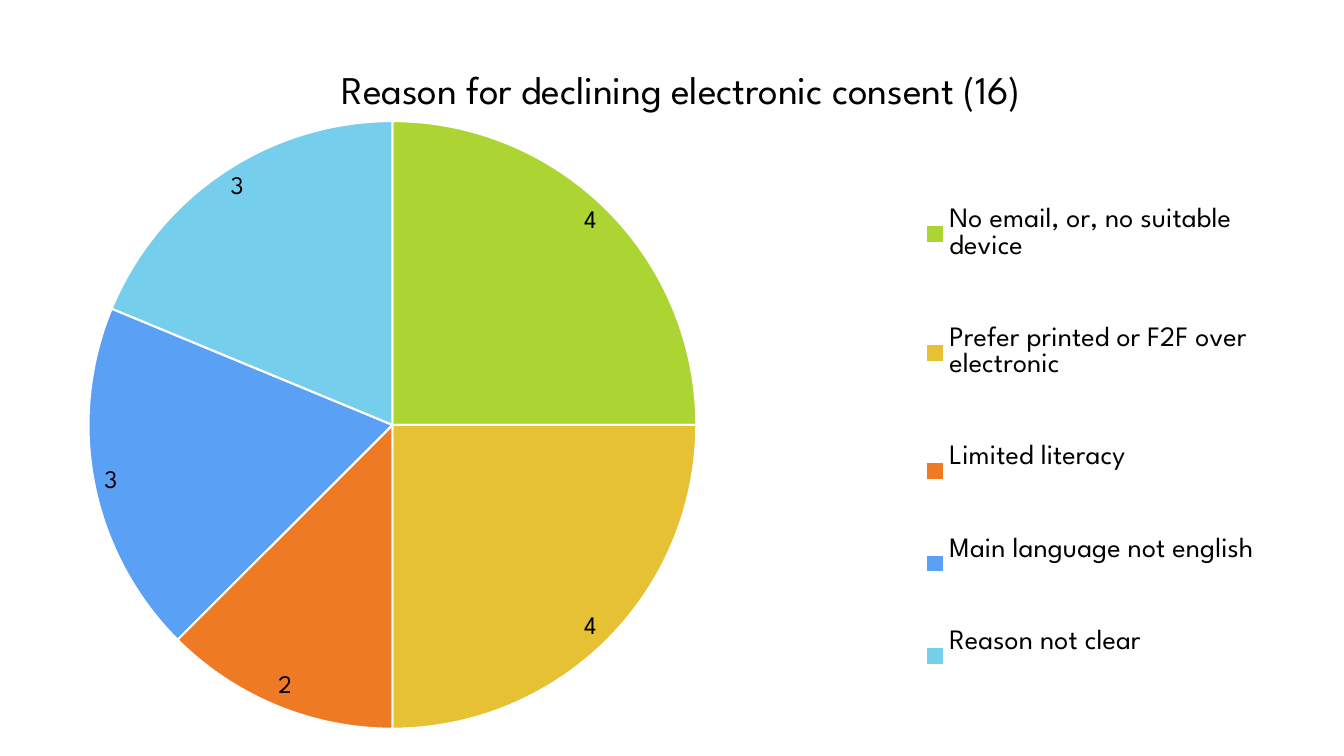
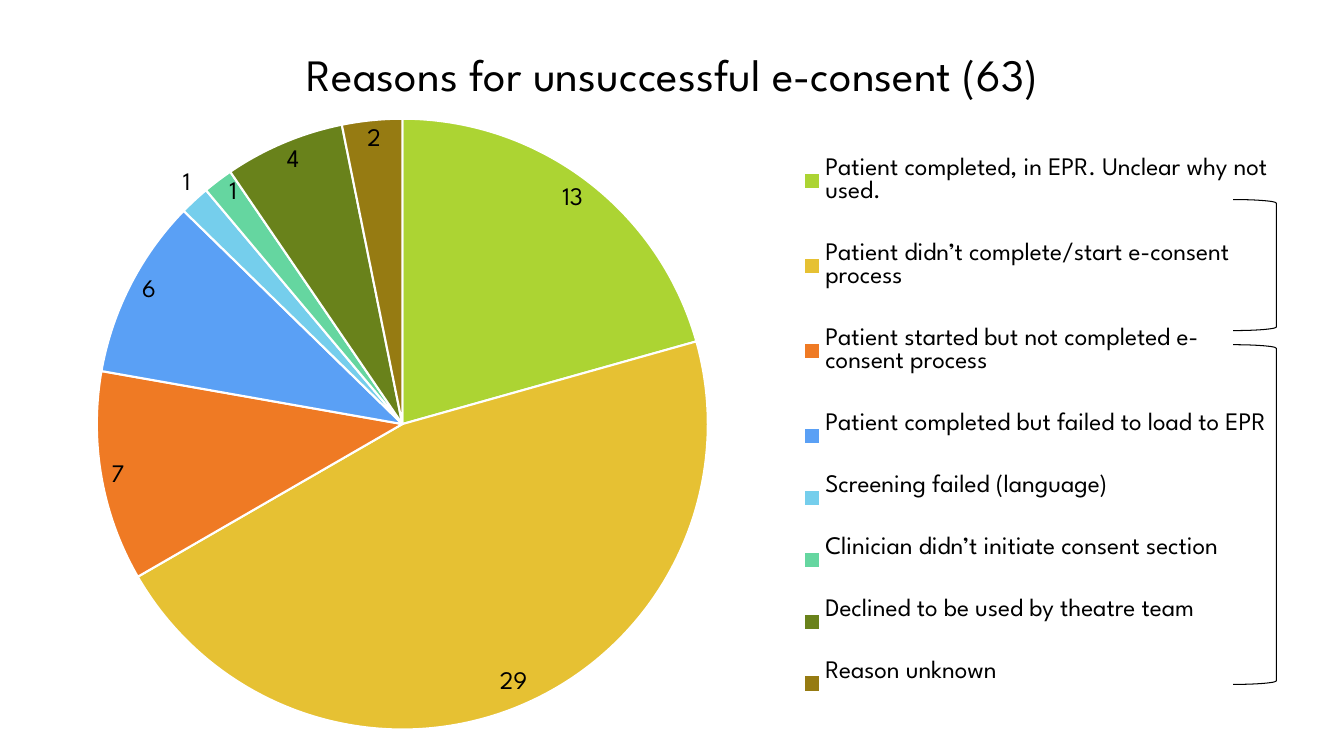
import lxml.etree
import pptx
import pptx.chart.data
import pptx.dml.color
import pptx.enum.chart
import pptx.enum.shapes
import pptx.oxml.ns
import pptx.util

Inches, Pt = pptx.util.Inches, pptx.util.Pt

# Shared look
FONT = "League Spartan"
COLOURS = {
    "text": "000000", "gap": "FFFFFF",
    "lime": "ACD433", "gold": "E6C133", "orange": "EF7A24", "blue": "5AA0F5",
    "sky": "75CEEC", "mint": "65D6A0", "olive": "69821B", "bronze": "967B12",
}
SLICES = ["lime", "gold", "orange", "blue", "sky", "mint", "olive", "bronze"]
LABEL_SIZE = 18

# Content: areas are in inches, layouts are fractions of the chart (x, y, w, h)
SLIDES = [
    {
        "title": "Reason for declining electronic consent (16)",
        "reasons": [
            ("No email, or, no suitable device", 4),
            ("Prefer printed or F2F over electronic", 4),
            ("Limited literacy", 2),
            ("Main language not english", 3),
            ("Reason not clear", 3),
        ],
        "area": (0.4, 0.37, 12.7, 6.93),
        "title_size": 28, "legend_size": 20,
        "title_at": (0.23, 0.04),
        "pie_at": (0.03, 0.12, 0.49, 0.87),
        "legend_at": (0.68, 0.15, 0.28, 0.83),
        "brackets": [],
    },
    {
        "title": "Reasons for unsuccessful e-consent (63)",
        "reasons": [
            ("Patient completed, in EPR. Unclear why not used.", 13),
            ("Patient didn’t complete/start e-consent process", 29),
            ("Patient started but not completed e-consent process", 7),
            ("Patient completed but failed to load to EPR", 6),
            ("Screening failed (language)", 1),
            ("Clinician didn’t initiate consent section", 1),
            ("Declined to be used by theatre team", 4),
            ("Reason unknown", 2),
        ],
        "area": (0.27, 0.18, 12.83, 7.13),
        "title_size": 32, "legend_size": 18,
        "title_at": (0.21, 0.04),
        "pie_at": (0.05, 0.14, 0.48, 0.85),
        "legend_at": (0.6, 0.14, 0.36, 0.84),
        "brackets": [(12.23, 1.98, 0.43, 1.3), (12.23, 3.42, 0.43, 3.37)],
    },
]


def rgb(name):
    return pptx.dml.color.RGBColor.from_string(COLOURS[name])


def set_font(font, size):
    for key, value in {"name": FONT, "size": Pt(size), "bold": False}.items():
        setattr(font, key, value)
    font.color.rgb = rgb("text")


def set_line(line, colour, width):
    line.color.rgb = rgb(colour)
    line.width = Pt(width)


def place(part, index, fractions, inner=False):
    """Give a chart part a manual layout, as its child number index."""
    qn = pptx.oxml.ns.qn
    for old in part.findall(qn("c:layout")):
        part.remove(old)
    layout = lxml.etree.Element(qn("c:layout"))
    manual = lxml.etree.SubElement(layout, qn("c:manualLayout"))
    settings = [("layoutTarget", "inner")] if inner else []
    settings += [("xMode", "edge"), ("yMode", "edge")]
    settings += zip("xywh", fractions)
    for tag, value in settings:
        lxml.etree.SubElement(manual, qn(f"c:{tag}")).set("val", str(value))
    part.insert(index, layout)


def add_pie(slide, content):
    names, counts = zip(*content["reasons"])
    data = pptx.chart.data.CategoryChartData()
    data.categories = names
    data.add_series("Series 1", counts)
    chart = slide.shapes.add_chart(
        pptx.enum.chart.XL_CHART_TYPE.PIE, *map(Inches, content["area"]), data).chart
    set_font(chart.font, 10)

    # Title
    chart.has_title = True
    title = chart.chart_title
    title.include_in_layout = False
    heading = title.text_frame.paragraphs[0].add_run()
    heading.text = content["title"]
    set_font(heading.font, content["title_size"])
    place(title._element, 1, content["title_at"])

    # Legend
    chart.has_legend = True
    legend = chart.legend
    legend.position = pptx.enum.chart.XL_LEGEND_POSITION.BOTTOM
    legend.include_in_layout = False
    set_font(legend.font, content["legend_size"])
    place(legend._element, 1, content["legend_at"])

    # Slices and their values
    pie = chart.plots[0]
    pie.vary_by_categories = True
    place(pie._element.getparent(), 0, content["pie_at"], inner=True)
    series = pie.series[0]
    for index, colour in enumerate(SLICES[:len(counts)]):
        look = series.points[index].format
        look.fill.solid()
        look.fill.fore_color.rgb = rgb(colour)
        set_line(look.line, "gap", 1.5)
    labels = series.data_labels
    labels.show_value = True
    labels.position = pptx.enum.chart.XL_LABEL_POSITION.BEST_FIT
    set_font(labels.font, LABEL_SIZE)


def add_bracket(slide, area):
    bracket = slide.shapes.add_shape(
        pptx.enum.shapes.MSO_SHAPE.RIGHT_BRACKET, *map(Inches, area))
    bracket.shadow.inherit = False
    bracket.fill.background()
    set_line(bracket.line, "text", 0.75)


def main():
    deck = pptx.Presentation()
    deck.slide_width, deck.slide_height = Inches(13.33), Inches(7.5)
    blank = deck.slide_layouts[6]
    for content in SLIDES:
        slide = deck.slides.add_slide(blank)
        add_pie(slide, content)
        for area in content["brackets"]:
            add_bracket(slide, area)
    deck.save("out.pptx")


if __name__ == "__main__":
    main()
